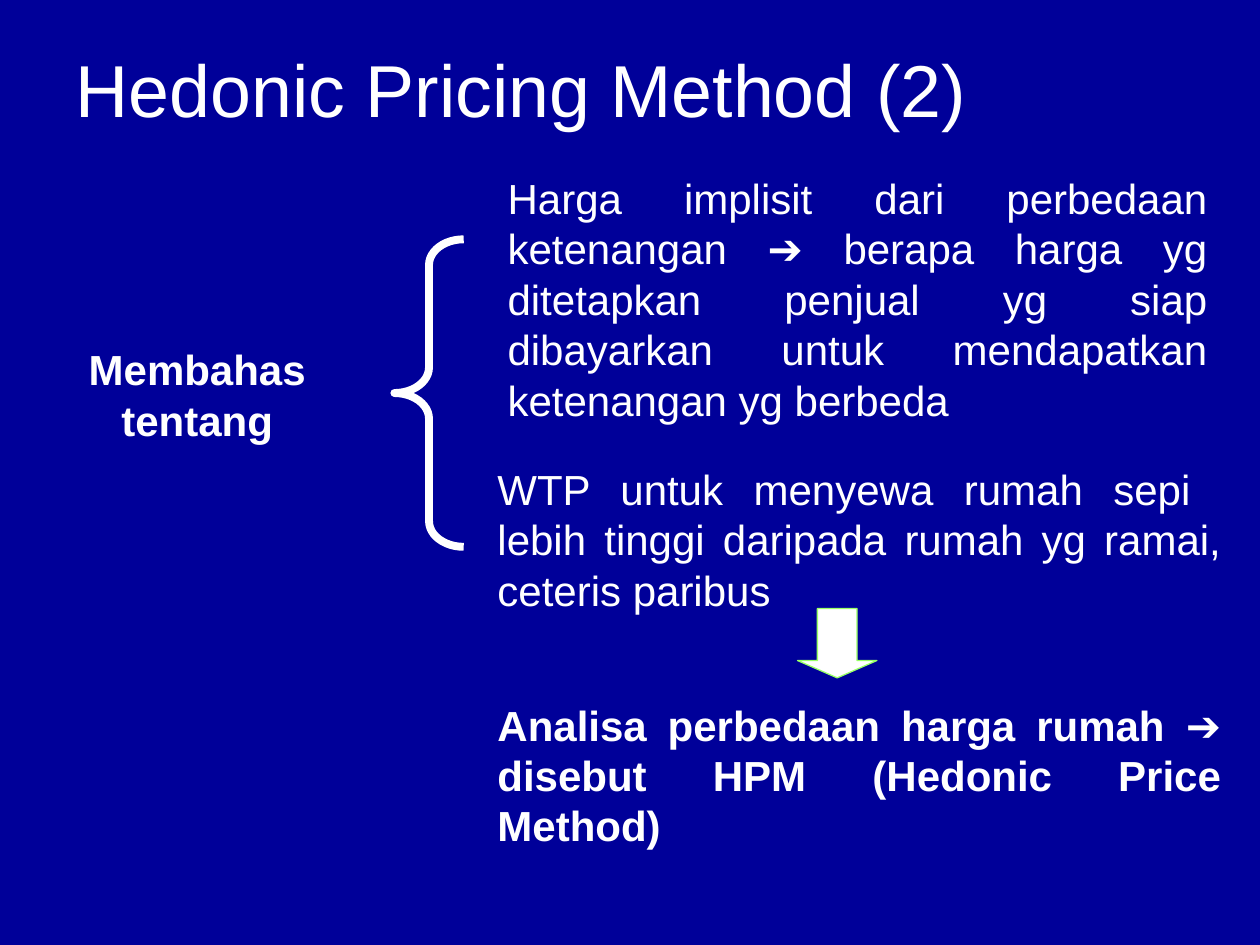
"""Build the slide on the hedonic pricing method."""
import pptx
import pptx.dml.color
import pptx.enum.shapes
import pptx.enum.text
import pptx.util

ALIGN = pptx.enum.text.PP_ALIGN
SHAPE = pptx.enum.shapes.MSO_SHAPE
COLUMNS, ROWS = 100, 75


def rgb(value):
    """Turn a hex string into a colour."""
    return pptx.dml.color.RGBColor.from_string(value)


class SlideBuilder:
    """Hold the style and the current slide."""

    font, ink, background, edge = "Arial", "FFFFFF", "000099", "99FF66"
    title_size, body_size, leading = 42, 24, 1.2

    def __init__(self, prs):
        """Add a title-only slide with a plain background."""
        self.cell_w = prs.slide_width / COLUMNS
        self.cell_h = prs.slide_height / ROWS
        self.slide = prs.slides.add_slide(prs.slide_layouts[5])
        fill = self.slide.background.fill
        fill.solid()
        fill.fore_color.rgb = rgb(self.background)

    def box(self, x, y, w, h):
        """Convert grid columns and rows to slide lengths."""
        return (round(x * self.cell_w), round(y * self.cell_h),
                round(w * self.cell_w), round(h * self.cell_h))

    def set_text(self, tf, text, size, align, bold=False):
        """Fill a text frame with one styled paragraph."""
        tf.word_wrap = True
        tf.vertical_anchor = pptx.enum.text.MSO_ANCHOR.TOP
        p = tf.paragraphs[0]
        p.text = text
        p.alignment = align
        p.space_before = pptx.util.Pt(0)
        p.line_spacing = pptx.util.Pt(size * self.leading)
        p.font.name = self.font
        p.font.size = pptx.util.Pt(size)
        p.font.bold = bold
        p.font.color.rgb = rgb(self.ink)

    def title(self, text, *place):
        """Move and fill the title placeholder."""
        sp = self.slide.shapes.title
        sp.left, sp.top, sp.width, sp.height = self.box(*place)
        sp.text_frame.auto_size = pptx.enum.text.MSO_AUTO_SIZE.NONE
        self.set_text(sp.text_frame, text, self.title_size, ALIGN.LEFT)

    def text(self, text, *place, align=ALIGN.JUSTIFY, bold=False):
        """Add a text box that grows with its text."""
        tf = self.slide.shapes.add_textbox(*self.box(*place)).text_frame
        tf.auto_size = pptx.enum.text.MSO_AUTO_SIZE.SHAPE_TO_FIT_TEXT
        self.set_text(tf, text, self.body_size, align, bold)

    def shape(self, kind, *place, adjustments, line, width, fill=None):
        """Add a preset shape with an outline and an optional fill."""
        sp = self.slide.shapes.add_shape(kind, *self.box(*place))
        sp.shadow.inherit = False
        for i, value in enumerate(adjustments):
            sp.adjustments[i] = value
        sp.line.color.rgb = rgb(line)
        sp.line.width = pptx.util.Pt(width)
        if fill:
            sp.fill.solid()
            sp.fill.fore_color.rgb = rgb(fill)
        else:
            sp.fill.background()


def main():
    """Lay out the slide and save it."""
    prs = pptx.Presentation()
    prs.slide_width = pptx.util.Inches(10)
    prs.slide_height = pptx.util.Inches(7.5)
    s = SlideBuilder(prs)
    s.title("Hedonic Pricing Method (2)", 5, 3, 90, 12.5)
    s.text("Membahas tentang", 3.3, 26.8, 24.7, 9, align=ALIGN.CENTER, bold=True)
    s.text("Harga implisit dari perbedaan ketenangan ➔ berapa harga yg "
           "ditetapkan penjual yg siap dibayarkan untuk mendapatkan "
           "ketenangan yg berbeda", 39.3, 13.2, 57.5, 21)
    s.text("WTP untuk menyewa rumah sepi  lebih tinggi daripada rumah yg "
           "ramai, ceteris paribus", 38.5, 36.3, 59.4, 13)
    s.shape(SHAPE.LEFT_BRACE, 31.3, 19, 5.5, 24.4,
            adjustments=(0.37, 0.5), line=s.ink, width=4.5)
    s.text("Analisa perbedaan harga rumah ➔ disebut HPM (Hedonic Price Method)",
           38.5, 55, 59.4, 13, bold=True)
    s.shape(SHAPE.DOWN_ARROW, 63.3, 48.3, 6.3, 5.5,
            adjustments=(0.5, 0.25), line=s.edge, width=0.75, fill=s.ink)
    prs.save("out.pptx")


if __name__ == "__main__":
    main()
